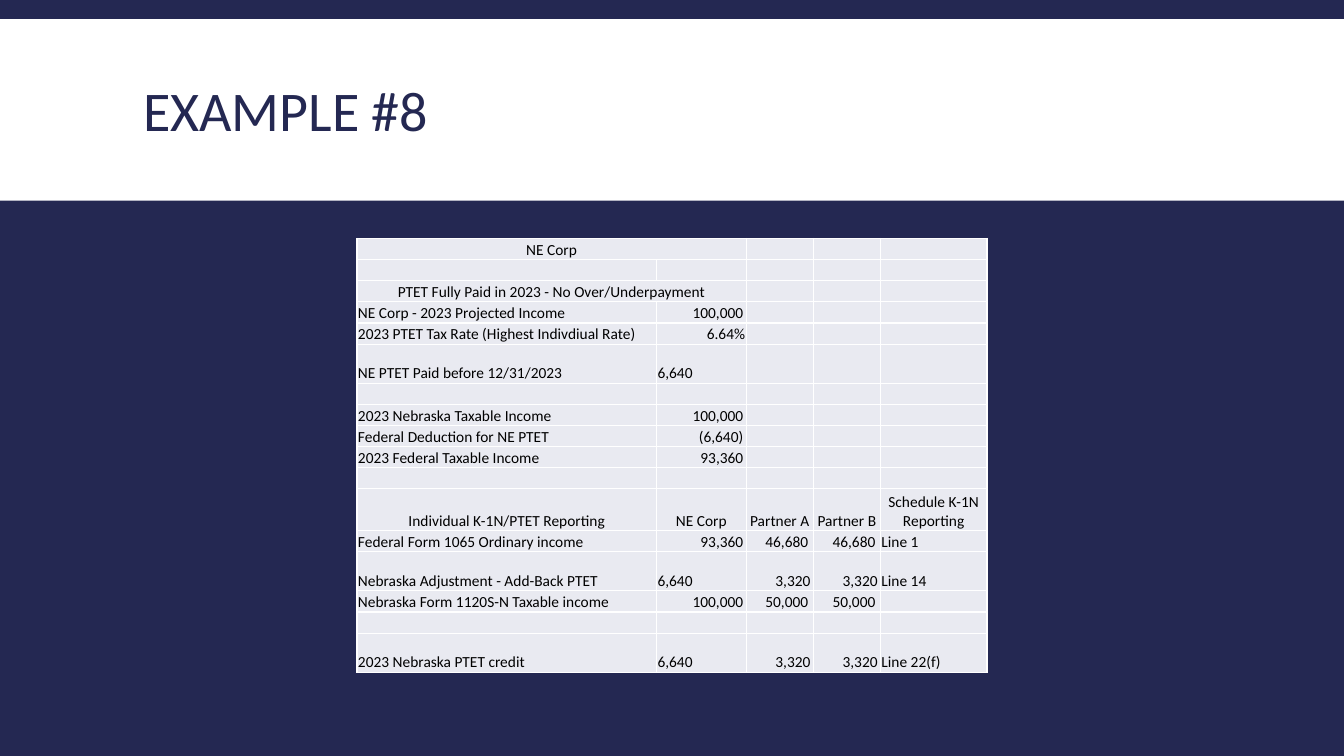
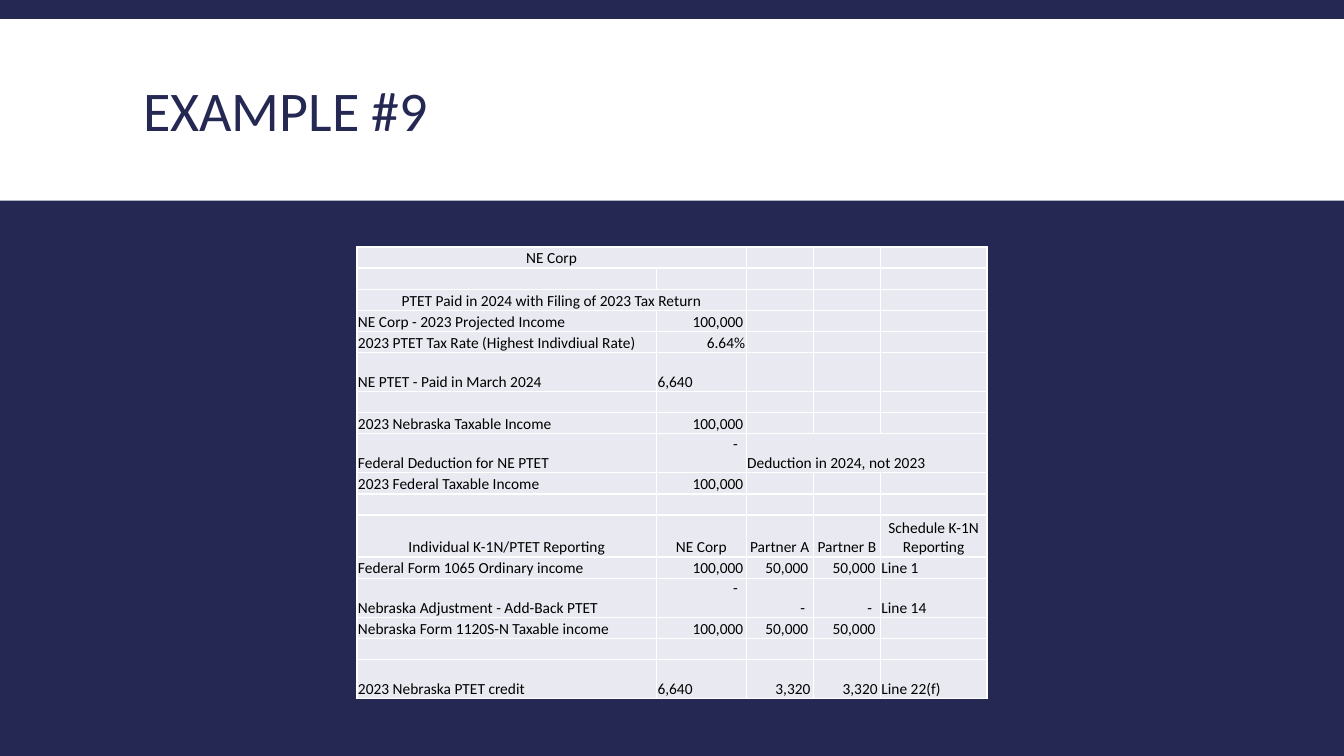
from pptx import Presentation
from pptx.dml.color import RGBColor
from pptx.enum.shapes import MSO_SHAPE
from pptx.enum.text import MSO_ANCHOR, PP_ALIGN
from pptx.oxml.ns import qn
from pptx.util import Pt
from lxml.etree import SubElement

COLORS = {"navy": "242852", "white": "FFFFFF", "cell": "E9EAF1", "ink": "000000"}
FONT = "Calibri"
SLIDE_WIDTH, SLIDE_HEIGHT = 960, 540
BAND = (0, 13.7, SLIDE_WIDTH, 129.6)
TITLE = (95, 22.3, 770.4, 118.8)
COLUMN_WIDTHS = (214, 64, 48, 48, 76)
ROW_HEIGHT, TALL_ROW, HEADING_ROW = 15.1, 27.9, 30

EXAMPLES = [
    {
        "title": "EXAMPLE #8",
        "table_top": 170.4,
        "scenario": "PTET Fully Paid in 2023 - No Over/Underpayment",
        "payment": "NE PTET Paid before 12/31/2023",
        "deduction": ["(6,640)"],
        "income": ("93,360", "46,680"),
        "add_back": ("6,640", "3,320"),
    },
    {
        "title": "EXAMPLE #9",
        "table_top": 176.4,
        "scenario": "PTET Paid in 2024 with Filing of 2023 Tax Return",
        "payment": "NE PTET - Paid in March 2024",
        "deduction": ["-", "Deduction in 2024, not 2023"],
        "income": ("100,000", "50,000"),
        "add_back": ("-", "-"),
    },
]
HEADINGS = ["Individual K-1N/PTET Reporting", "NE Corp", "Partner A", "Partner B",
            "Schedule K-1N Reporting"]


def statement_rows(example):
    """One cell is a title over two columns; a third cell of three is a note."""
    income, income_share = example["income"]
    add_back, add_back_share = example["add_back"]
    return [
        ["NE Corp"],
        [],
        [example["scenario"]],
        ["NE Corp - 2023 Projected Income", "100,000"],
        ["2023 PTET Tax Rate (Highest Indivdiual Rate)", "6.64%"],
        [example["payment"], "6,640"],
        [],
        ["2023 Nebraska Taxable Income", "100,000"],
        ["Federal Deduction for NE PTET", *example["deduction"]],
        ["2023 Federal Taxable Income", income],
        [],
        HEADINGS,
        ["Federal Form 1065 Ordinary income", income, income_share, income_share, "Line 1"],
        ["Nebraska Adjustment - Add-Back PTET", add_back, add_back_share, add_back_share,
         "Line 14"],
        ["Nebraska Form 1120S-N Taxable income", "100,000", "50,000", "50,000"],
        [],
        ["2023 Nebraska PTET credit", "6,640", "3,320", "3,320", "Line 22(f)"],
    ]


def rgb(name):
    return RGBColor.from_string(COLORS[name])


def add_run(paragraph, text, size, color):
    run = paragraph.add_run()
    run.text = text
    run.font.size, run.font.name = Pt(size), FONT
    run.font.color.rgb = rgb(color)


def row_height(row):
    if row is HEADINGS:
        return HEADING_ROW
    return TALL_ROW if len(row) > 1 and row[1] in ("6,640", "-") else ROW_HEIGHT


def alignment(row, column):
    if row is HEADINGS or len(row) == 1:
        return PP_ALIGN.CENTER
    is_amount = 1 <= column <= 3 and len(row) != 3 or column == 1
    if is_amount and row[column] != "6,640":
        return PP_ALIGN.RIGHT
    return PP_ALIGN.LEFT


def amount_gap(text, column):
    """Space right of an amount, as in accounting number formats."""
    if text.endswith("%"):
        return 0.7
    if text == "-":
        return 6
    return 3.6 if column > 1 and len(text) == 6 else 2


def style_cell(cell):
    properties = cell._tc.get_or_add_tcPr()
    for side in ("a:lnL", "a:lnR", "a:lnT", "a:lnB"):
        border = SubElement(properties, qn(side), w=str(Pt(1)))
        SubElement(SubElement(border, qn("a:solidFill")), qn("a:srgbClr"), val=COLORS["white"])
    cell.fill.solid()
    cell.fill.fore_color.rgb = rgb("cell")
    cell.margin_left = cell.margin_right = cell.margin_top = Pt(0.7)
    cell.margin_bottom = 0
    cell.vertical_anchor = MSO_ANCHOR.BOTTOM


def fill_cell(cell, row, column):
    paragraph = cell.text_frame.paragraphs[0]
    if column >= len(row):
        SubElement(paragraph._p, qn("a:endParaRPr"), sz="1100")
        return
    text = row[column]
    paragraph.alignment = alignment(row, column)
    if paragraph.alignment == PP_ALIGN.RIGHT:
        cell.margin_right = Pt(amount_gap(text, column))
        if text == "-" and column == 1:
            cell.vertical_anchor = MSO_ANCHOR.TOP
    add_run(paragraph, text, 11, "ink")


def add_statement(slide, example):
    rows = statement_rows(example)
    heights = [row_height(row) for row in rows]
    width = sum(COLUMN_WIDTHS)
    table = slide.shapes.add_table(
        len(rows), len(COLUMN_WIDTHS), Pt((SLIDE_WIDTH - width) / 2),
        Pt(example["table_top"]), Pt(width), Pt(sum(heights))).table
    table.first_row = table.horz_banding = False
    for column, column_width in zip(table.columns, COLUMN_WIDTHS):
        column.width = Pt(column_width)
    for r, (row, height) in enumerate(zip(rows, heights)):
        table.rows[r].height = Pt(height)
        for c in range(len(COLUMN_WIDTHS)):
            style_cell(table.cell(r, c))
            fill_cell(table.cell(r, c), row, c)
        if len(row) == 1:
            table.cell(r, 0).merge(table.cell(r, 1))
        elif len(row) == 3:
            table.cell(r, 2).merge(table.cell(r, 4))


def add_title(slide, text):
    frame = slide.shapes.title.text_frame
    paragraph = frame.paragraphs[0]
    paragraph.alignment = PP_ALIGN.LEFT
    paragraph.line_spacing = 0.85
    add_run(paragraph, text, 40, "navy")


def set_up_layout(layout, slide):
    """Put background, title place and white band on the layout, behind every slide."""
    layout.background.fill.solid()
    layout.background.fill.fore_color.rgb = rgb("navy")
    title = layout.placeholders[0]
    title.left, title.top, title.width, title.height = map(Pt, TITLE)
    title.text_frame.vertical_anchor = MSO_ANCHOR.MIDDLE
    band = slide.shapes.add_shape(MSO_SHAPE.RECTANGLE, *map(Pt, BAND))
    band.shadow.inherit = False
    band.fill.solid()
    band.fill.fore_color.rgb = rgb("white")
    band.line.fill.background()
    layout.shapes.element.insert(2, band.element)


def main():
    deck = Presentation()
    deck.slide_width, deck.slide_height = Pt(SLIDE_WIDTH), Pt(SLIDE_HEIGHT)
    layout = deck.slide_layouts[5]
    slides = [deck.slides.add_slide(layout) for _ in EXAMPLES]
    set_up_layout(layout, slides[0])
    for slide, example in zip(slides, EXAMPLES):
        add_title(slide, example["title"])
        add_statement(slide, example)
    deck.save("out.pptx")


if __name__ == "__main__":
    main()
